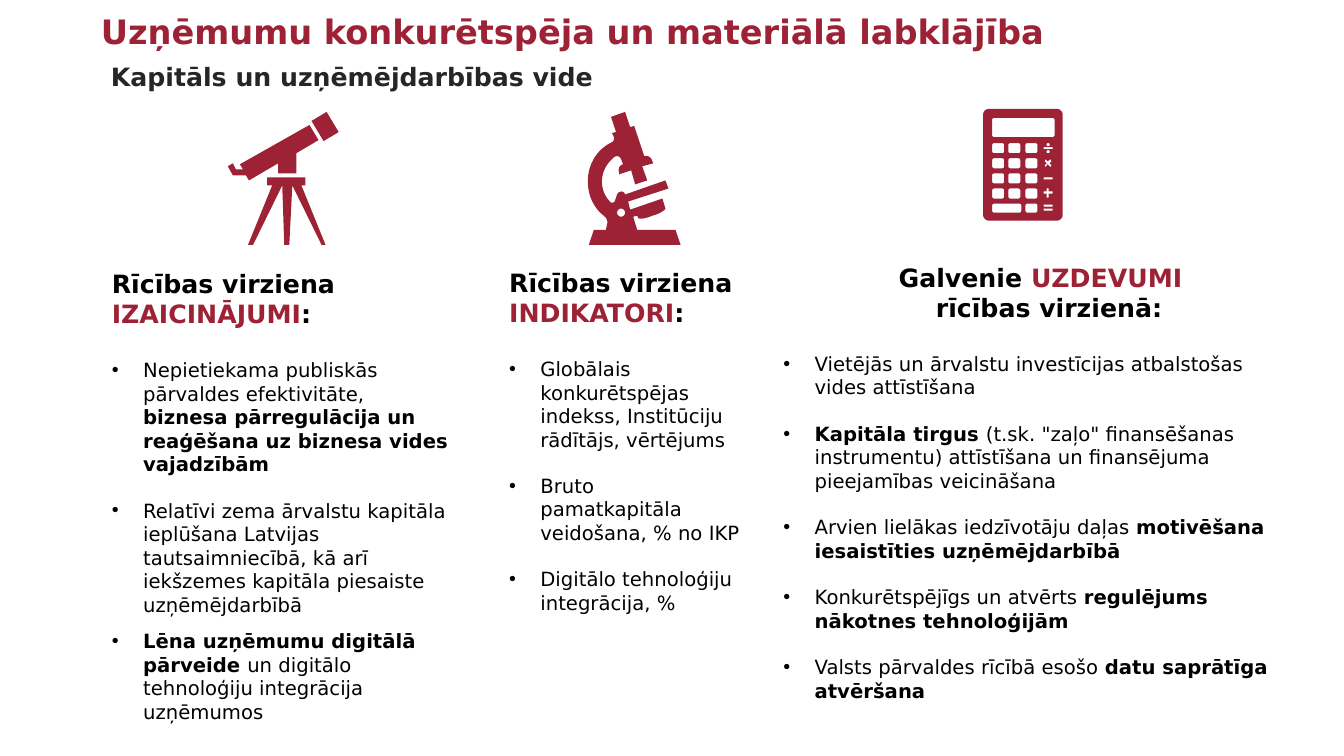
from lxml.etree import SubElement
from pptx import Presentation
from pptx.dml.color import RGBColor as RGB
from pptx.enum.text import MSO_ANCHOR as ANCHOR, MSO_AUTO_SIZE as AUTO, PP_ALIGN as ALIGN
from pptx.oxml.ns import qn
from pptx.util import Pt

PX = 9144
FONT = "DejaVu Sans"
COLORS = {"red": "9D2235", "dark": "262626", "black": "000000"}
FRAME = dict(margin_left=5 * PX, margin_right=5 * PX, margin_top=5 * PX, margin_bottom=5 * PX,
             vertical_anchor=ANCHOR.TOP, auto_size=AUTO.SHAPE_TO_FIT_TEXT)
STYLES = {
    "title": (24, True, "red"),
    "subtitle": (18, True, "dark"),
    "head": (18, True, "black"),
    "accent": (18, True, "red"),
    "plain": (14, False, "black"),
    "bold": (14, True, "black"),
}

TELESCOPE = [
    [(98, 0), (83, 9), (95, 29), (110, 20)],
    [(81, 13), (12, 52), (15, 57), (8, 57), (5, 51), (0, 54), (5, 63), (18, 63), (21, 68),
     (50, 51), (50, 61), (68, 61), (68, 41), (90, 28)],
    [(39, 65), (39, 73), (44, 73), (20, 132), (25, 132), (54, 73), (56, 132), (61, 132),
     (64, 73), (93, 132), (97, 132), (73, 73), (77, 73), (77, 65)],
]
MICROSCOPE = [
    (37, 0), (23, 5), (28, 20), (24, 21), (26, 25), (26, 27, 26, 29, 24, 30),
    (9, 37, 0, 52, 0, 69), (0, 83, 6, 96, 17, 104), (19, 106, 20, 109, 19, 112),
    (18, 117), (6, 117), (1, 132), (92, 132), (87, 117), (49, 117), (45, 104), (49, 103),
    (50, 105), (50, 107, 57, 106, 64, 103), (72, 101, 77, 97, 77, 96), (74, 86), (42, 97),
    (40, 89), (80, 76), (77, 68), (37, 82), (36, 78, 31, 78, 29, 82), (27, 88),
    (27, 90, 23, 91, 22, 89), (17, 84, 14, 77, 14, 69), (14, 59, 19, 51, 26, 45),
    (29, 43, 32, 44, 33, 47), (35, 52), (31, 53, 30, 57, 31, 60), (31, 62), (43, 58),
    (47, 72), (59, 68), (54, 54), (65, 51), (64, 49), (63, 45, 60, 43, 56, 44),
    (46, 14), (42, 15),
]
TIMES = [(62, 50), (64, 52), (67, 50), (68, 52), (66, 54), (68, 56), (67, 58), (64, 55),
         (62, 58), (61, 56), (63, 54), (61, 52)]
PLUS = [(63, 79), (65, 79), (65, 82), (69, 82), (69, 84), (65, 84), (65, 88), (63, 88),
        (63, 84), (60, 84), (60, 82), (63, 82)]


def rounded(x, y, w, h, r=0):
    """Return the outline of a rectangle with corner radius r."""
    if not r:
        return [(x, y), (x + w, y), (x + w, y + h), (x, y + h)]
    k, right, low = r * 0.45, x + w, y + h
    return [(x + r, y), (right - r, y), (right - k, y, right, y + k, right, y + r),
            (right, low - r), (right, low - k, right - k, low, right - r, low),
            (x + r, low), (x + k, low, x, low - k, x, low - r),
            (x, y + r), (x, y + k, x + k, y, x + r, y)]


def calculator():
    """Return the body, screen, keys and operator signs as outlines."""
    keys = [rounded(x, 34 + 15 * row, 12, 10, 2) for row in range(4) for x in (9, 25, 42)]
    bars = [rounded(60, y, 9, 2) for y in (38, 68, 95, 99)]
    dots = [rounded(63, y, 3, 3, 1) for y in (34, 41)]
    return [rounded(0, 0, 79, 111, 6), rounded(9, 9, 62, 19, 2), *keys,
            rounded(9, 94, 29, 9, 2), rounded(42, 94, 12, 9, 2), *bars, *dots, TIMES, PLUS]


def flatten(outline, steps=8):
    """Turn lines and cubic curves into plain points."""
    points = []
    for node in outline:
        if len(node) == 2:
            points.append(node)
            continue
        a, b, c, d = points[-1], node[:2], node[2:4], node[4:]
        for i in range(1, steps + 1):
            t = i / steps
            u = 1 - t
            points.append(tuple(u**3 * a[n] + 3 * u * u * t * b[n] + 3 * u * t * t * c[n]
                                + t**3 * d[n] for n in (0, 1)))
    return points


def add_icon(s, left, top, outlines):
    """Draw outlines as one red shape with its corner at left, top."""
    fb = None
    for outline in outlines:
        pts = [((left + x) * PX, (top + y) * PX) for x, y in flatten(outline)]
        if fb is None:
            fb = s.shapes.build_freeform(*pts[0], scale=1.0)
        else:
            fb.move_to(*pts[0])
        fb.add_line_segments(pts[1:], close=True)
    sp = fb.convert_to_shape()
    sp.shadow.inherit = False
    sp.fill.solid()
    sp.fill.fore_color.rgb = RGB.from_string(COLORS["red"])
    sp.line.fill.background()


def set_frame(sp, box, wrap):
    """Place a text shape in its box and return its text frame."""
    sp.left, sp.top, sp.width, sp.height = (v * PX for v in box)
    tf = sp.text_frame
    for name, value in dict(FRAME, word_wrap=wrap).items():
        setattr(tf, name, value)
    return tf


def write(p, runs, **formats):
    """Fill a paragraph with styled runs and set its formats."""
    for name, value in dict(dict(alignment=ALIGN.LEFT), **formats).items():
        setattr(p, name, value)
    for text, style in runs:
        r = p.add_run()
        r.text = text
        size, bold, color = STYLES[style]
        for name, value in dict(name=FONT, size=Pt(size), bold=bold).items():
            setattr(r.font, name, value)
        r.font.color.rgb = RGB.from_string(COLORS[color])


def add_heading(sp, box, text, style):
    """Write one unwrapped heading line."""
    tf = set_frame(sp, box, False)
    write(tf.paragraphs[0], [(text, style)], space_before=Pt(6), space_after=Pt(6))


def add_column(s, box, heads, bullets, align=ALIGN.LEFT):
    """Write a column: heading paragraphs, then bullets with the gap above each."""
    tf = set_frame(s.shapes.add_textbox(0, 0, 0, 0), box, True)
    for i, runs in enumerate(heads):
        p = tf.add_paragraph() if i else tf.paragraphs[0]
        write(p, runs, alignment=align)
        if i:
            p._p.get_or_add_pPr().set("marL", str(17 * PX))
    for gap, runs in bullets:
        p = tf.add_paragraph()
        write(p, runs, space_before=Pt(gap))
        pPr = p._p.get_or_add_pPr()
        pPr.set("marL", str(31 * PX))
        pPr.set("indent", str(-31 * PX))
        SubElement(pPr, qn("a:buFont"), typeface="Arial")
        SubElement(pPr, qn("a:buChar"), char="•")


def main():
    """Build the slide and save it."""
    prs = Presentation()
    prs.slide_width, prs.slide_height = 1333 * PX, 750 * PX
    s = prs.slides.add_slide(prs.slide_layouts[5])
    add_heading(s.shapes.title, (95, 6, 956, 50),
                "Uzņēmumu konkurētspēja un materiālā labklājība", "title")
    add_heading(s.shapes.add_textbox(0, 0, 0, 0), (105, 56, 491, 40),
                "Kapitāls un uzņēmējdarbības vide", "subtitle")

    add_column(s, (106, 261, 350, 525),
               [[("Rīcības virziena ", "head"), ("IZAICINĀJUMI", "accent"), (":", "head")]],
               [(21, [("Nepietiekama publiskās pārvaldes efektivitāte, ", "plain"),
                      ("biznesa pārregulācija un reaģēšana uz biznesa vides vajadzībām", "bold")]),
                (16.3, [("Relatīvi zema ārvalstu kapitāla ieplūšana Latvijas tautsaimniecībā, "
                         "kā arī iekšzemes kapitāla piesaiste uzņēmējdarbībā", "plain")]),
                (9.3, [("Lēna uzņēmumu digitālā pārveide ", "bold"),
                       ("un digitālo tehnoloģiju integrācija uzņēmumos", "plain")])])
    add_icon(s, 226, 111, TELESCOPE)

    add_column(s, (500, 260, 240, 384),
               [[("Rīcības virziena ", "head"), ("INDIKATORI", "accent"), (":", "head")]],
               [(21, [("Globālais konkurētspējas indekss, Institūciju rādītājs, vērtējums",
                       "plain")]),
                (16.3, [("Bruto pamatkapitāla veidošana, % no IKP", "plain")]),
                (16.3, [("Digitālo tehnoloģiju integrācija, %", "plain")])])
    add_icon(s, 583, 111, [MICROSCOPE, rounded(29, 96, 8, 8, 4)])

    add_column(s, (772, 255, 520, 454),
               [[("Galvenie ", "head"), ("UZDEVUMI", "accent")], [("rīcības virzienā:", "head")]],
               [(21, [("Vietējās un ārvalstu investīcijas atbalstošas vides attīstīšana", "plain")]),
                (16.3, [("Kapitāla tirgus ", "bold"),
                        ("(t.sk. \"zaļo\" finansēšanas instrumentu) attīstīšana un finansējuma "
                         "pieejamības veicināšana", "plain")]),
                (16.3, [("Arvien lielākas iedzīvotāju daļas ", "plain"),
                        ("motivēšana iesaistīties uzņēmējdarbībā", "bold")]),
                (16.3, [("Konkurētspējīgs un atvērts ", "plain"),
                        ("regulējums nākotnes tehnoloģijām", "bold")]),
                (16.3, [("Valsts pārvaldes rīcībā esošo ", "plain"),
                        ("datu saprātīga atvēršana", "bold")])], ALIGN.CENTER)
    add_icon(s, 975, 108, calculator())
    prs.save("out.pptx")


if __name__ == "__main__":
    main()
